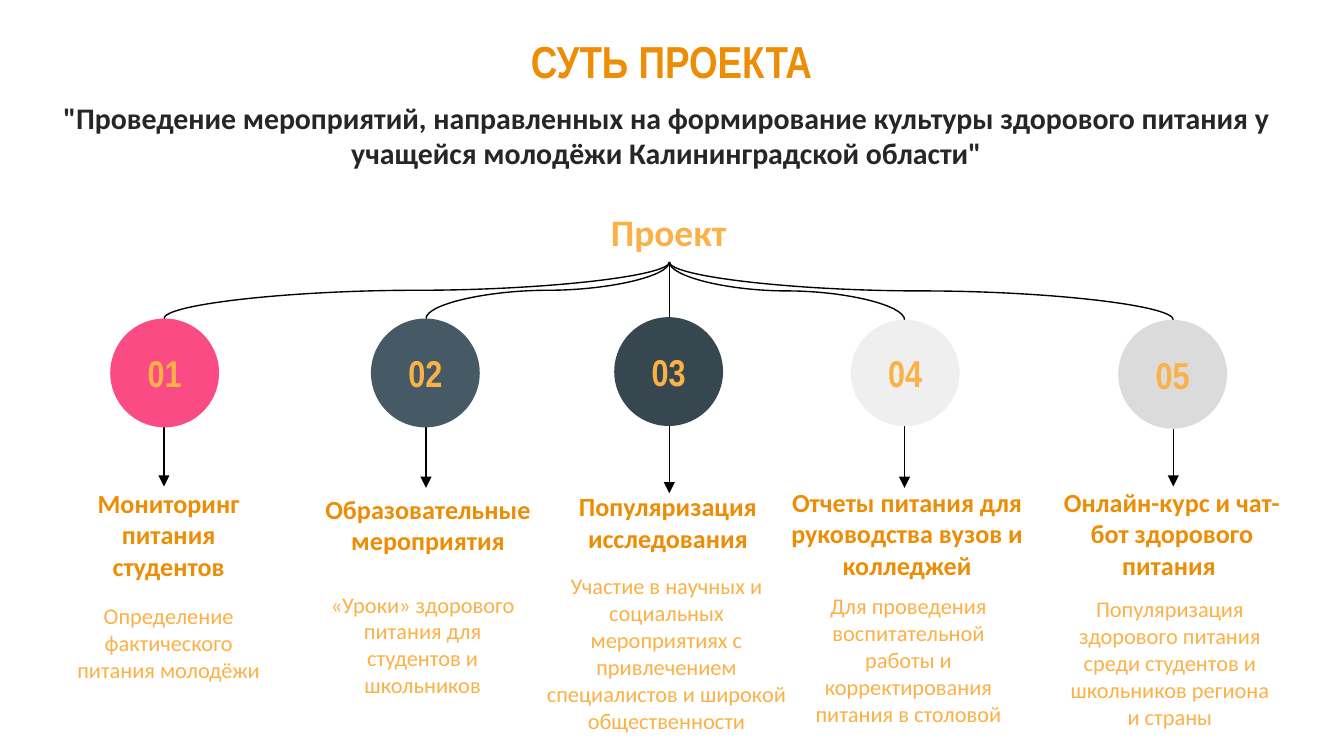
from lxml.etree import SubElement
from pptx import Presentation
from pptx.dml.color import RGBColor
from pptx.enum.shapes import MSO_CONNECTOR as CONNECTOR, MSO_SHAPE as SHAPE
from pptx.enum.text import MSO_ANCHOR as ANCHOR, PP_ALIGN as ALIGN
from pptx.oxml.ns import qn
from pptx.util import Pt

PX = 9144
BLACK = RGBColor(0x00, 0x00, 0x00)
INK = RGBColor(0x26, 0x26, 0x26)
ORANGE = RGBColor(0xEC, 0x8D, 0x05)
AMBER = RGBColor(0xFB, 0xB1, 0x46)
PINK = RGBColor(0xFA, 0x4B, 0x84)
SLATE = RGBColor(0x45, 0x5A, 0x64)
DARK_SLATE = RGBColor(0x37, 0x47, 0x4F)
PALE_GREY = RGBColor(0xEF, 0xEF, 0xEF)
GREY = RGBColor(0xDB, 0xDB, 0xDB)

TITLE = {"name": "Arial Narrow", "size": Pt(24), "bold": True, "color": ORANGE}
SUBTITLE = {"name": "Calibri", "size": Pt(16), "bold": True, "color": INK}
ROOT = {"name": "Calibri", "size": Pt(20), "bold": True, "color": AMBER}
NUMBER = {"name": "Arial Narrow", "size": Pt(20), "bold": True, "color": AMBER}
HEADING = {"name": "Calibri", "size": Pt(14), "bold": True, "color": ORANGE}
DETAIL = {"name": "Calibri", "size": Pt(12), "bold": False, "color": AMBER}

ROOT_X, ROOT_BOTTOM = 498, 195
CIRCLE = 81

BRANCHES = [
    ("01", PINK, (82, 237, CIRCLE, CIRCLE), 122, 362,
     "Мониторинг питания студентов", (40, 373, 171, 49),
     "Определение фактического питания молодёжи", (40, 436, 171, 84)),
    ("02", SLATE, (276, 237, CIRCLE, CIRCLE), 317, 363,
     "Образовательные мероприятия", (228, 366, 181, 49),
     "«Уроки» здорового питания для студентов и школьников", (225, 432, 179, 95)),
    ("03", DARK_SLATE, (457, 236, CIRCLE, CIRCLE), 498, 367,
     "Популяризация исследования", (416, 366, 162, 45),
     "Участие в научных и социальных мероприятиях с привлечением "
     "специалистов и широкой общественности", (391, 432, 210, 108)),
    ("04", PALE_GREY, (633, 238, CIRCLE, 79), 673, 363,
     "Отчеты питания для руководства вузов и колледжей", (578, 370, 194, 54),
     "Для проведения воспитательной работы и корректирования питания в столовой",
     (587, 443, 178, 96)),
    ("05", GREY, (832, 238, CIRCLE, CIRCLE), 873, 362,
     "Онлайн-курс и чат-бот здорового питания ", (781, 358, 182, 78),
     "Популяризация здорового питания среди студентов и школьников региона и страны",
     (781, 445, 179, 96)),
]

presentation = Presentation()
presentation.slide_width = 1000 * PX
presentation.slide_height = presentation.slide_width * 9 // 16
slide = presentation.slides.add_slide(presentation.slide_layouts[6])


def write(box, text, style, fill=None, anchor=ANCHOR.MIDDLE, inset=10):
    left, top, width, height = (value * PX for value in box)
    if fill is None:
        shape = slide.shapes.add_textbox(left, top, width, height)
    else:
        shape = slide.shapes.add_shape(SHAPE.OVAL, left, top, width, height)
        shape.shadow.inherit = False
        shape.fill.solid()
        shape.fill.fore_color.rgb = fill
        shape.line.fill.background()
    frame = shape.text_frame
    layout = {"word_wrap": True, "vertical_anchor": anchor,
              "margin_left": 10 * PX, "margin_right": 10 * PX,
              "margin_top": inset * PX, "margin_bottom": inset * PX}
    for name, value in layout.items():
        setattr(frame, name, value)
    paragraph = frame.paragraphs[0]
    paragraph.alignment = ALIGN.CENTER
    run = paragraph.add_run()
    run.text = text
    for name, value in style.items():
        if name == "color":
            run.font.color.rgb = value
        else:
            setattr(run.font, name, value)


def connect(kind, *ends):
    connector = slide.shapes.add_connector(kind, *(round(end * PX) for end in ends))
    connector.line.color.rgb = BLACK
    connector.line.width = Pt(0.75)
    SubElement(connector.element.spPr, qn("a:effectLst"))
    return connector


write((214, 15, 571, 52), "СУТЬ ПРОЕКТА", TITLE, anchor=ANCHOR.TOP)
write((6, 69, 980, 64),
      '"Проведение мероприятий, направленных на формирование культуры здорового '
      'питания у учащейся молодёжи Калининградской области"',
      SUBTITLE, anchor=ANCHOR.TOP, inset=5)
write((389, 150, 217, 45), "Проект", ROOT)

for number, fill, circle, x, arrow_end, heading, heading_box, detail, detail_box in BRANCHES:
    top = circle[1]
    middle_x, middle_y = (ROOT_X + x) / 2, (ROOT_BOTTOM + top) / 2
    half_drop, half_span = (top - ROOT_BOTTOM) / 2, abs(x - ROOT_X) / 2
    side = 1 if x > ROOT_X else -1
    curve = connect(CONNECTOR.CURVE,
                    middle_x + side * half_drop, middle_y - half_span,
                    middle_x - side * half_drop, middle_y + half_span)
    curve.rotation = 270 if side > 0 else 90

    arrow = connect(CONNECTOR.STRAIGHT, x, top + circle[3], x, arrow_end)
    SubElement(arrow.element.spPr.find(qn("a:ln")), qn("a:tailEnd"), type="triangle")

    write(circle, number, NUMBER, fill)
    write(heading_box, heading, HEADING)
    write(detail_box, detail, DETAIL)

presentation.save("out.pptx")
